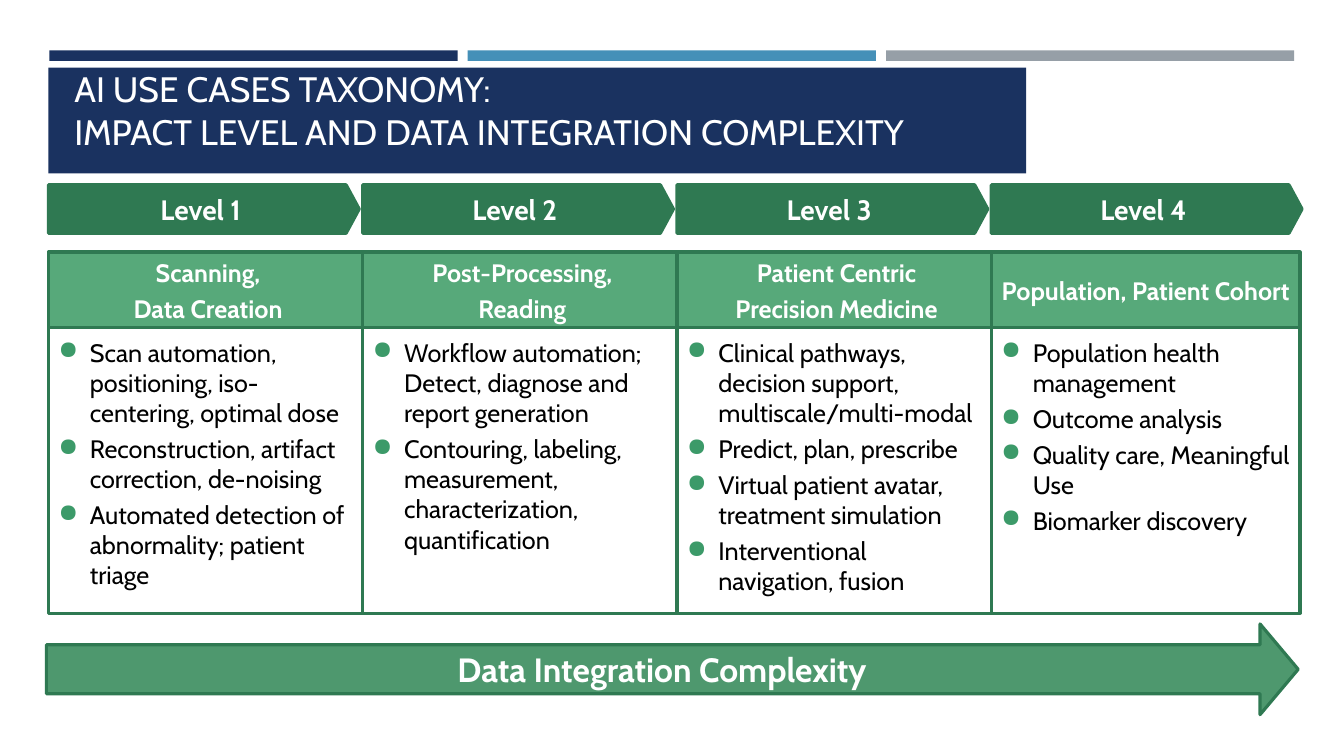
from pptx import Presentation
from pptx.dml.color import RGBColor
from pptx.enum.shapes import MSO_SHAPE
from pptx.enum.text import MSO_ANCHOR, PP_ALIGN
from pptx.oxml.ns import qn
from pptx.util import Pt
from lxml.etree import SubElement

# Content
TITLE = "AI USE CASES TAXONOMY:\vIMPACT LEVEL AND DATA INTEGRATION COMPLEXITY"
LEVELS = [
    ("Level 1", ["Scanning,", "Data Creation"],
     ["Scan automation, positioning, iso-centering, optimal dose",
      "Reconstruction, artifact correction, de-noising",
      "Automated detection of abnormality; patient triage"]),
    ("Level 2", ["Post-Processing,", "Reading"],
     ["Workflow automation; Detect, diagnose and report generation",
      "Contouring, labeling, measurement, characterization, quantification"]),
    ("Level 3", ["Patient Centric", "Precision Medicine"],
     ["Clinical pathways, decision support, multiscale/multi-modal",
      "Predict, plan, prescribe",
      "Virtual patient avatar, treatment simulation",
      "Interventional navigation, fusion"]),
    ("Level 4", ["Population, Patient Cohort"],
     ["Population health management", "Outcome analysis",
      "Quality care, Meaningful Use", "Biomarker discovery"]),
]
ARROW_LABEL = "Data Integration Complexity"

COLORS = {"navy": "1A3260", "blue": "4590B8", "gray": "969FA7", "green": "2F7952",
          "header": "57A97A", "arrow": "4E986E", "bullet": "3C9A69",
          "white": "FFFFFF", "black": "000000"}
BARS = ["navy", "blue", "gray"]

# Layout in points
LEFT, PITCH, RIGHT = 34.6, 224.5, 928.6
BAR_LEFT, BAR_WIDTH, BAR_PITCH = 35.3, 291.6, 298.8


def color(name):
    return RGBColor.from_string(COLORS[name])


def add_block(page, kind, left, top, width, height, fill, line=None):
    shape = page.shapes.add_shape(kind, Pt(left), Pt(top), Pt(width), Pt(height))
    shape.shadow.inherit = False
    shape.fill.solid()
    shape.fill.fore_color.rgb = color(fill)
    if line:
        shape.line.color.rgb = color(line)
        shape.line.width = Pt(2.25)
    else:
        shape.line.fill.background()
    return shape


def add_bullet(para):
    props = para._p.get_or_add_pPr()
    props.set("marL", str(Pt(22.5)))
    props.set("indent", str(-Pt(22.5)))
    bullet_color = SubElement(props, qn("a:buClr"))
    SubElement(bullet_color, qn("a:srgbClr"), val=COLORS["bullet"])
    SubElement(props, qn("a:buChar"), char="●")


def write(shape, lines, size, insets, ink="white", bold=True, anchor=MSO_ANCHOR.MIDDLE,
          bullets=False, **formats):
    frame = shape.text_frame
    frame.word_wrap = True
    frame.vertical_anchor = anchor
    for side, inset in zip(("left", "top", "right", "bottom"), insets):
        setattr(frame, f"margin_{side}", Pt(inset))
    for index, line in enumerate(lines):
        para = frame.add_paragraph() if index else frame.paragraphs[0]
        para.text = line
        if bullets:
            add_bullet(para)
        for name, value in ({"alignment": PP_ALIGN.CENTER} | formats).items():
            setattr(para, name, value)
        for span in para.runs:
            for name, value in {"name": "Cabin", "size": Pt(size), "bold": bold}.items():
                setattr(span.font, name, value)
            span.font.color.rgb = color(ink)


def build():
    deck = Presentation()
    deck.slide_width, deck.slide_height = Pt(960), Pt(540)
    page = deck.slides.add_slide(deck.slide_layouts[6])

    # Bars and title panel
    for index, fill in enumerate(BARS):
        add_block(page, MSO_SHAPE.RECTANGLE, BAR_LEFT + index * BAR_PITCH, 36,
                  BAR_WIDTH, 7.5, fill)
    add_block(page, MSO_SHAPE.RECTANGLE, LEFT, 48.3, 698.4, 75.6, "navy")
    title = page.shapes.add_textbox(Pt(46), Pt(55.4), Pt(674), Pt(57))
    write(title, [TITLE], 25.2, (7.2, 3.6, 7.2, 3.6), bold=False,
          anchor=MSO_ANCHOR.BOTTOM, alignment=PP_ALIGN.LEFT)

    # One column per level
    for index, (level, heading, cases) in enumerate(LEVELS):
        left = LEFT + index * PITCH
        width = min(228, RIGHT - left)
        tag = add_block(page, MSO_SHAPE.PENTAGON, left, 132, 222, 34.6, "green", "green")
        tag.adjustments[0] = 0.27
        write(tag, [level], 20, (7.2, 3.6, 7.2, 3.6))
        body = add_block(page, MSO_SHAPE.RECTANGLE, left, 233.5, width, 204.5, "white", "green")
        write(body, cases, 18, (7.2,) * 4, ink="black", bold=False, anchor=MSO_ANCHOR.TOP,
              bullets=True, alignment=PP_ALIGN.LEFT, space_after=Pt(4))
        header = add_block(page, MSO_SHAPE.RECTANGLE, left, 180, width, 54, "header", "green")
        write(header, heading, 18, (0, 4, 0, 0), line_spacing=0.9, space_after=Pt(6))

    # Complexity arrow
    arrow = add_block(page, MSO_SHAPE.RIGHT_ARROW, 33.1, 445.7, 894.2, 64.8, "arrow", "green")
    arrow.adjustments[0], arrow.adjustments[1] = 0.54, 0.42
    write(arrow, [ARROW_LABEL], 24, (0,) * 4)

    deck.save("out.pptx")


if __name__ == "__main__":
    build()
